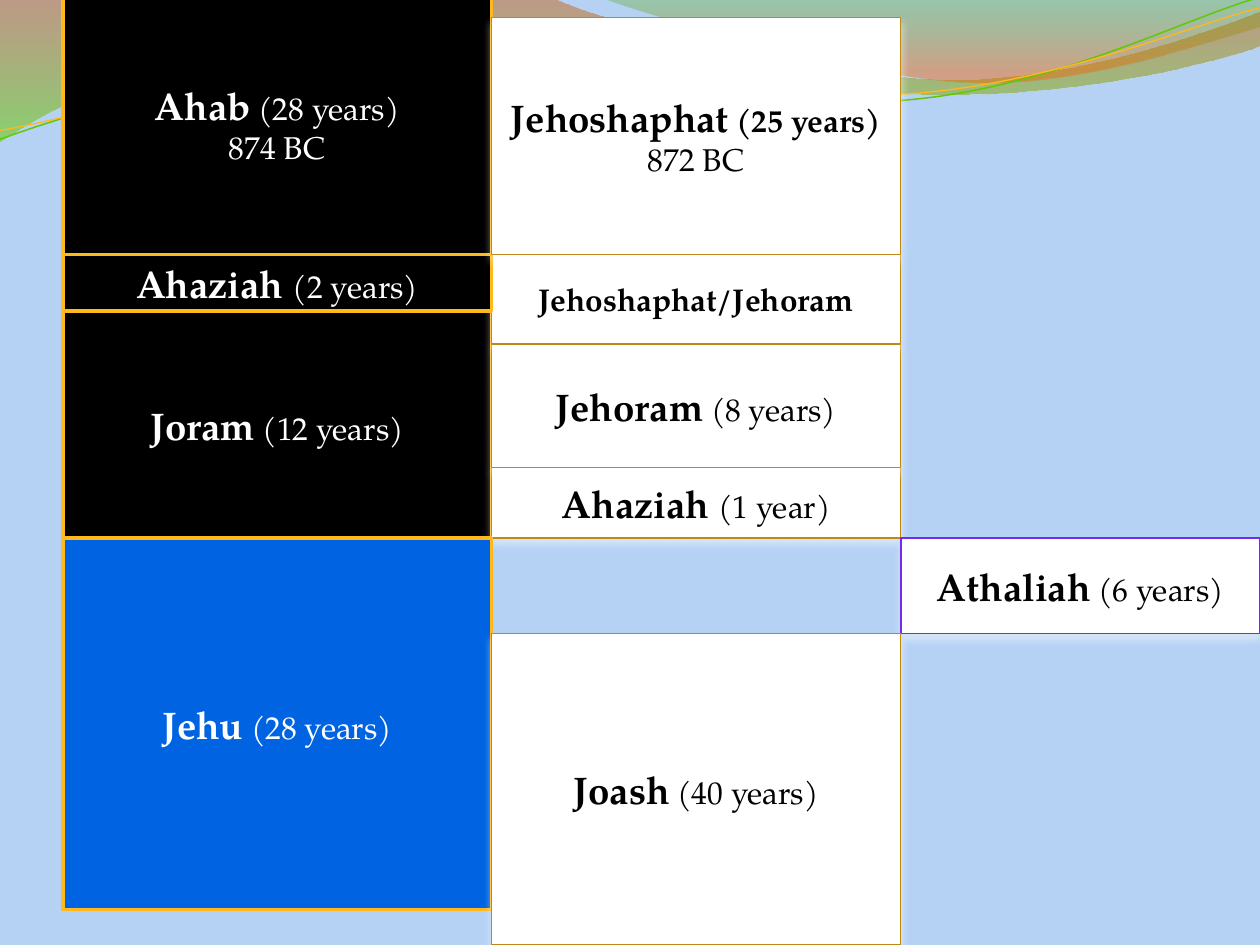
from lxml.etree import SubElement
from pptx import Presentation
from pptx.dml.color import RGBColor
from pptx.enum.shapes import MSO_SHAPE
from pptx.enum.text import MSO_ANCHOR, PP_ALIGN
from pptx.oxml.ns import qn
from pptx.util import Pt

PX = 9144
FONT = "TeX Gyre Pagella"
BLACK, WHITE, BLUE = "000000", "FFFFFF", "0064E2"
GOLD, BRONZE, PURPLE = "FFB91D", "BF8A13", "732BEA"
ISRAEL_LEFT, JUDAH_LEFT, QUEEN_LEFT, PAGE_RIGHT = 50, 390, 715, 1000

ISRAEL = [
    (247, 427, BLACK, "Joram", " (12 years)", ""),
    (202, 247, BLACK, "Ahaziah ", "(2 years)", ""),
    (427, 722, BLUE, "Jehu", " (28 years)", ""),
    (-5, 202, BLACK, "Ahab", " (28 years)", "874 BC"),
]
JUDAH = [
    (371, 427, "Ahaziah ", "(1 year)", ""),
    (273, 371, "Jehoram", " (8 years)", ""),
    (202, 273, "", "Jehoshaphat/Jehoram", ""),
    (503, 750, "Joash", " (40 years)", ""),
    (14, 202, "Jehoshaphat", " (25 years)", "872 BC"),
]
BOLD_DETAILS = {"Jehoshaphat/Jehoram", " (25 years)"}

BACK_WAVE = [
    (0, 0), (440, -1),
    (476, 17, 664, 63, 758, 63), (853, 63, 958, 26, 1000, 9),
    (1001, 36),
    (983, 44, 870, 76, 746, 75), (622, 75, 382, 28, 257, 34),
    (129, 36, 46, 83, -1, 113), (0, 0),
]
FRONT_WAVE = [
    (479, -1), (509, 11, 682, 62, 769, 65), (856, 69, 961, 32, 1000, 21),
    (1000, 0), (479, -1),
]
GREEN_CURVE = [
    (-2, 87), (47, 72, 158, 41, 277, 42), (396, 42, 591, 93, 712, 90),
    (832, 87, 940, 36, 1000, 22),
]
GOLD_CURVE = [
    (-2, 80), (46, 75, 164, 45, 283, 46), (403, 46, 596, 88, 716, 85),
    (835, 83, 942, 42, 1001, 30),
]


def color(value):
    return RGBColor.from_string(value)


def add_outline(page, segments, close):
    points = [(segment[i] * PX, segment[i + 1] * PX)
              for segment in segments for i in range(0, len(segment), 2)]
    builder = page.shapes.build_freeform(*points[0], scale=1)
    builder.add_line_segments(points[1:], close=close)
    outline = builder.convert_to_shape()
    outline.shadow.inherit = False
    bend_segments(outline, segments)
    return outline


def bend_segments(outline, segments):
    lines = iter(list(outline.element.spPr.iter(qn("a:lnTo"))))
    for segment in segments[1:]:
        line = next(lines)
        if len(segment) == 2:
            continue
        line.tag = qn("a:cubicBezTo")
        for extra in (next(lines), next(lines)):
            line.append(extra[0])
            extra.getparent().remove(extra)


def add_wave(page, segments, stops):
    wave = add_outline(page, segments, True)
    wave.line.fill.background()
    wave.fill.gradient()
    wave.fill.gradient_angle = 270
    for stop, (position, value, opacity) in zip(wave.fill.gradient_stops, stops):
        stop.position = position
        stop.color.rgb = color(value)
    tints = wave.element.spPr.iter(qn("a:srgbClr"))
    for tint, (position, value, opacity) in zip(tints, stops):
        SubElement(tint, qn("a:alpha"), val=str(opacity * 1000))


def add_curve(page, segments, value, width):
    curve = add_outline(page, segments, False)
    curve.rotation = 357.3
    curve.fill.background()
    curve.line.color.rgb = color(value)
    curve.line.width = Pt(width)


def add_text(para, text, size=18, bold=False, ink=BLACK):
    span = para.add_run()
    span.text = text
    span.font.name = FONT
    span.font.size = Pt(size)
    span.font.bold = bold
    span.font.color.rgb = color(ink)


def add_glow(box):
    effects = box.element.spPr.find(qn("a:effectLst"))
    shadow = SubElement(effects, qn("a:outerShdw"), blurRad=str(Pt(4.5)),
                        dist=str(Pt(3)), dir="5400000", rotWithShape="0")
    tint = SubElement(shadow, qn("a:srgbClr"), val=WHITE)
    SubElement(tint, qn("a:alpha"), val="48000")


def add_reign(page, left, right, top, bottom, name, detail, date,
              fill=WHITE, ink=BLACK, border=BRONZE, width=0.75, glow=True):
    box = page.shapes.add_shape(MSO_SHAPE.RECTANGLE, left * PX, top * PX,
                                (right - left) * PX, (bottom - top) * PX)
    box.fill.solid()
    box.fill.fore_color.rgb = color(fill)
    box.line.color.rgb = color(border)
    box.line.width = Pt(width)
    box.shadow.inherit = False
    if glow:
        add_glow(box)
    frame = box.text_frame
    frame.word_wrap = True
    frame.vertical_anchor = MSO_ANCHOR.MIDDLE
    para = frame.paragraphs[0]
    para.alignment = PP_ALIGN.CENTER
    if name:
        add_text(para, name, size=22, bold=True, ink=ink)
    add_text(para, detail, bold=detail in BOLD_DETAILS, ink=ink)
    if date:
        para = frame.add_paragraph()
        para.alignment = PP_ALIGN.CENTER
        add_text(para, date, ink=ink)


def main():
    deck = Presentation()
    deck.slide_width, deck.slide_height = 1000 * PX, 750 * PX
    page = deck.slides.add_slide(deck.slide_layouts[6])
    page.background.fill.solid()
    page.background.fill.fore_color.rgb = color("B5D2F5")

    add_wave(page, BACK_WAVE, [(0, "C95600", 45), (1, "63D200", 55)])
    add_wave(page, FRONT_WAVE, [(0, "50AB00", 30), (0.8, "F06700", 45)])
    add_curve(page, GREEN_CURVE, "60C804", 0.85)
    add_curve(page, GOLD_CURVE, GOLD, 0.75)

    def add_israel(top, bottom, fill, *words):
        add_reign(page, ISRAEL_LEFT, JUDAH_LEFT, top, bottom, *words,
                  fill=fill, ink=WHITE, border=GOLD, width=2, glow=False)

    def add_judah(reign):
        add_reign(page, JUDAH_LEFT, QUEEN_LEFT, *reign)

    add_israel(*ISRAEL[0])
    for reign in JUDAH[:3]:
        add_judah(reign)
    for reign in ISRAEL[1:3]:
        add_israel(*reign)
    add_reign(page, QUEEN_LEFT, PAGE_RIGHT, 427, 503, "Athaliah", " (6 years)", "",
              border=PURPLE)
    add_judah(JUDAH[3])
    add_israel(*ISRAEL[3])
    add_judah(JUDAH[4])
    deck.save("out.pptx")


if __name__ == "__main__":
    main()
